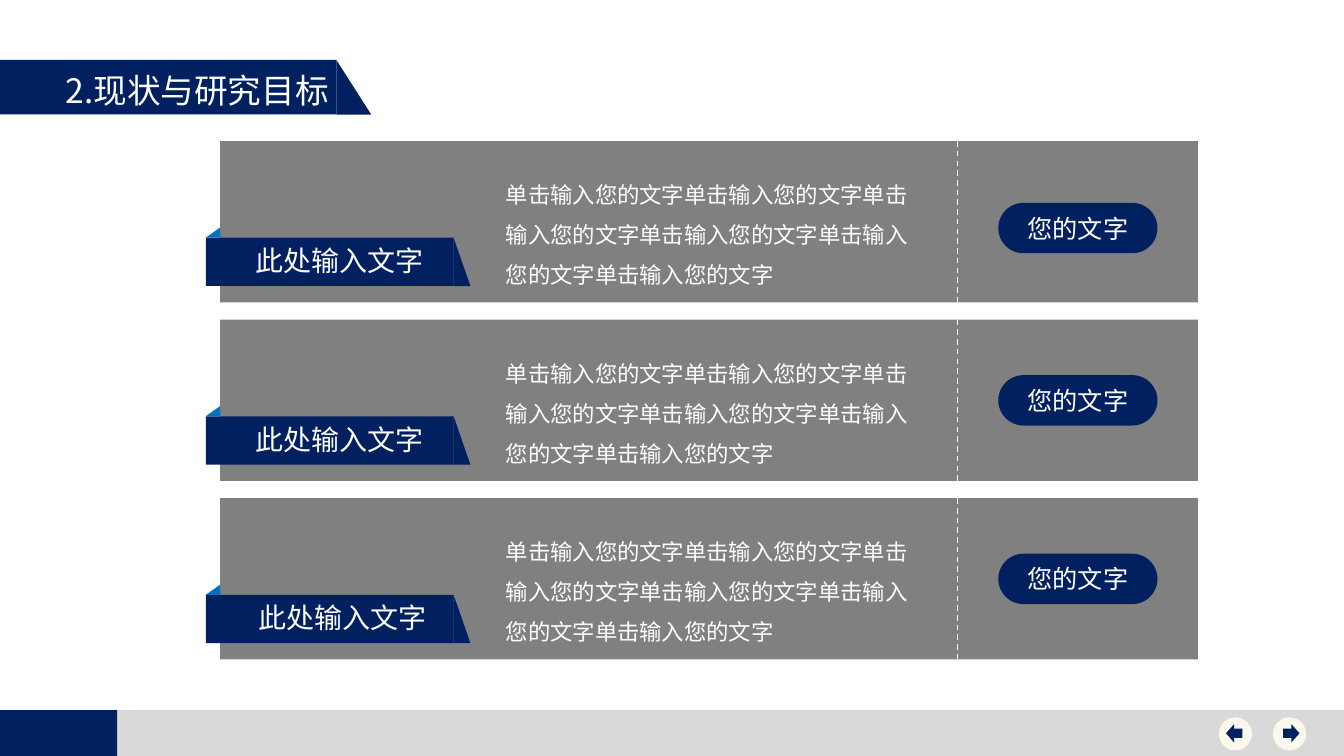
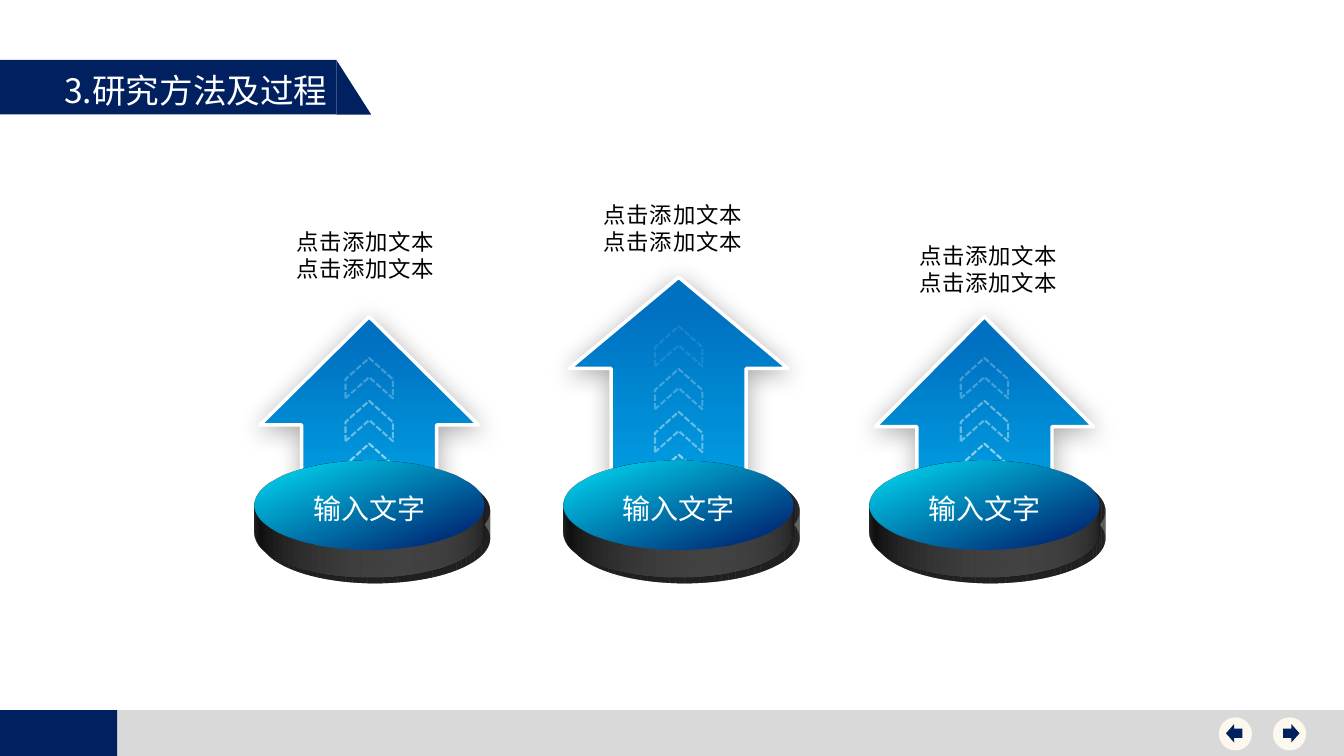
"""Build two slides: stacked research panels and three rising arrows."""
from lxml import etree
from pptx import Presentation, util as u
from pptx.dml.color import RGBColor
from pptx.enum import dml, shapes, text
from pptx.oxml.ns import qn

NAVY = RGBColor(0x00, 0x20, 0x60)
BLUE = RGBColor(0x00, 0x70, 0xC0)
SKY = RGBColor(0x00, 0xB0, 0xF0)
CYAN = RGBColor(0x00, 0xDF, 0xF6)
DEEP = RGBColor(0x00, 0x27, 0x74)
GREY = RGBColor(0x80, 0x80, 0x80)
PALE = RGBColor(0xD9, 0xD9, 0xD9)
CREAM = RGBColor(0xFC, 0xF8, 0xED)
WHITE = RGBColor(0xFF, 0xFF, 0xFF)
BLACK = RGBColor(0x00, 0x00, 0x00)
FONT = "Noto Sans CJK SC"
KIND = shapes.MSO_SHAPE
LEFT, MID = text.PP_ALIGN.LEFT, text.PP_ALIGN.CENTER

deck = Presentation()
deck.slide_width, deck.slide_height = u.Inches(13.33), u.Inches(7.5)
COL, ROW = deck.slide_width / 160, deck.slide_height / 90


def put(page, kind, x, y, w, h, fill=None):
    """Place a shape, or a text box if kind is None, on the grid."""
    box = [round(v) for v in (x * COL, y * ROW, w * COL, h * ROW)]
    if kind is None:
        return page.shapes.add_textbox(*box)
    item = page.shapes.add_shape(kind, *box)
    item.shadow.inherit = False
    item.line.fill.background()
    if fill is None:
        item.fill.background()
    else:
        item.fill.solid()
        item.fill.fore_color.rgb = fill
    return item


def write(item, lines, size, color, align=LEFT, lead=1.2, anchor=text.MSO_ANCHOR.TOP, gap=0):
    """Fill a shape with paragraphs in the deck's font."""
    frame = item.text_frame
    frame.word_wrap = True
    frame.auto_size = text.MSO_AUTO_SIZE.NONE
    frame.vertical_anchor = anchor
    for i, line in enumerate(lines):
        para = frame.add_paragraph() if i else frame.paragraphs[0]
        para.alignment = align
        para.line_spacing = u.Pt(round(size * lead, 1))
        run = para.add_run()
        run.text = line
        run.font.size = u.Pt(size)
        run.font.color.rgb = color
        run.font.name = FONT
        etree.SubElement(run.font._element, qn("a:ea"), typeface=FONT)
        if gap:
            run.font._element.set("spc", str(gap))


base = deck.slide_layouts[5]
for mark in list(base.placeholders):
    if mark.placeholder_format.type != shapes.PP_PLACEHOLDER.TITLE:
        mark.element.getparent().remove(mark.element)

goals = deck.slides.add_slide(base)
for wide, fill in ((160, PALE), (13.95, NAVY)):
    band = put(goals, KIND.RECTANGLE, 0, 84.55, wide, 5.45, fill)
    base.shapes.element.append(band.element)
steps = deck.slides.add_slide(base)

for page, name, x in ((goals, "2.现状与研究目标", 6.6), (steps, "3.研究方法及过程", 6.45)):
    put(page, KIND.RECTANGLE, 0, 7.13, 40.05, 6.5, NAVY)
    put(page, KIND.RIGHT_TRIANGLE, 40.05, 7.15, 4.15, 6.5, NAVY)
    title = page.shapes.title
    title.left, title.top = round(x * COL), round(7.7 * ROW)
    title.width, title.height = round(37.6 * COL), round(6 * ROW)
    write(title, [name], 24, WHITE)
    page.shapes.element.append(title.element)
    for kind, x, gap in ((KIND.LEFT_ARROW, 145.1, 0.85), (KIND.RIGHT_ARROW, 151.55, 1.2)):
        put(page, KIND.OVAL, x, 85.4, 3.95, 3.95, CREAM)
        put(page, kind, x + gap, 86.2, 1.95, 2.2, NAVY)

for i, (shift, drop) in enumerate(((0, 7.35), (0, 6.6), (0.3, 6.6))):
    y = 16.8 + 21.26 * i
    put(goals, KIND.RECTANGLE, 26.2, y, 116.4, 19.2, GREY)
    put(goals, KIND.RECTANGLE, 24.5, y + 11.5, 29.5, 5.75, NAVY)
    put(goals, KIND.RIGHT_TRIANGLE, 54, y + 11.5, 2, 5.75, NAVY)
    fold = put(goals, KIND.RIGHT_TRIANGLE, 24.5, y + 10.3, 1.7, 1.2, BLUE)
    fold.element.spPr.find(qn("a:xfrm")).set("flipH", "1")
    rule = goals.shapes.add_connector(
        shapes.MSO_CONNECTOR.STRAIGHT,
        round(114 * COL), round(y * ROW), round(114 * COL), round((y + 19.2) * ROW))
    rule.line.color.rgb = CREAM
    rule.line.width = u.Pt(1)
    rule.line.dash_style = dml.MSO_LINE.DASH
    etree.SubElement(rule.element.spPr, qn("a:effectLst"))
    write(put(goals, None, 29.25 + shift, y + 11.6, 23, 5.3), ["此处输入文字"], 20, WHITE)
    pill = put(goals, KIND.ROUNDED_RECTANGLE, 118.85, y + drop, 18.95, 6, NAVY)
    pill.adjustments[0] = 0.5
    write(pill, ["您的文字"], 18, WHITE, MID, anchor=text.MSO_ANCHOR.MIDDLE)
    body = put(goals, None, 59.03, y + 2.63, 50.8, 15.7)
    write(body, ["单击输入您的文字" * 6], 16, WHITE, lead=1.79)

ARROWS = (
    (43.95, 37.7, 27, 0.496, 52.4, 3, 43.5, 26.6),
    (80.8, 33, 33, 0.418, 53.7, 4, 80.1, 23.4),
    (117.2, 37.7, 27, 0.504, 52.4, 3, 117.7, 28.2),
)
for x, top, tall, head, low, count, mid, note in ARROWS:
    arrow = put(steps, KIND.UP_ARROW, x - 13, top, 26, tall, BLUE)
    arrow.adjustments[0], arrow.adjustments[1] = 0.619, head

    for i in range(count):
        mark = put(steps, KIND.CHEVRON, x - 2.4, low - 5.1 * i, 4.8, 5.64)
        mark.rotation = 270
        mark.adjustments[0] = 0.525
        mark.line.color.rgb = WHITE
        mark.line.width = u.Pt(1.5)
        mark.line.dash_style = dml.MSO_LINE.SQUARE_DOT
        tint = mark.line._ln.find(".//" + qn("a:srgbClr"))
        etree.SubElement(tint, qn("a:alpha"), val=str(55000 - 15000 * i))

    lines = ["点击添加文本"] * 2
    write(put(steps, None, mid - 13.5, note, 27, 7.7), lines, 16, BLACK, MID, gap=50)

    disc = put(steps, KIND.OVAL, x - 13.7, 47.5, 27.4, 25.2, DEEP)
    for item, start, end, turn, thick, blur, dist, way, alpha in (
            (arrow, SKY, BLUE, 90, 2.5, 17.8, 3, 87, 33),
            (disc, CYAN, DEEP, 315, 2, 10, 6, 45, 40)):
        item.fill.gradient()
        item.fill.gradient_angle = turn
        first, last = item.fill.gradient_stops
        first.color.rgb, last.color.rgb = start, end
        first.position, last.position = 0, 0.9
        item.line.color.rgb = WHITE
        item.line.width = u.Pt(thick)
        glow = etree.SubElement(
            item.element.spPr.find(qn("a:effectLst")), qn("a:outerShdw"),
            blurRad=str(u.Pt(blur)), dist=str(u.Pt(dist)), dir=str(way * 60000))
        tint = etree.SubElement(glow, qn("a:srgbClr"), val=str(BLACK))
        etree.SubElement(tint, qn("a:alpha"), val=str(alpha * 1000))

    scene = etree.SubElement(disc.element.spPr, qn("a:scene3d"))
    view = etree.SubElement(scene, qn("a:camera"), prst="orthographicFront")
    etree.SubElement(view, qn("a:rot"), lat=str(295 * 60000), lon="0", rev="0")
    etree.SubElement(scene, qn("a:lightRig"), rig="threePt", dir="t")
    solid = etree.SubElement(disc.element.spPr, qn("a:sp3d"), extrusionH=str(u.Pt(22)))
    side = etree.SubElement(solid, qn("a:extrusionClr"))
    etree.SubElement(side, qn("a:srgbClr"), val=str(GREY))
    write(put(steps, None, x - 10.2, 57.9, 20.4, 5.3), ["输入文字"], 20, WHITE, MID)

deck.save("out.pptx")
